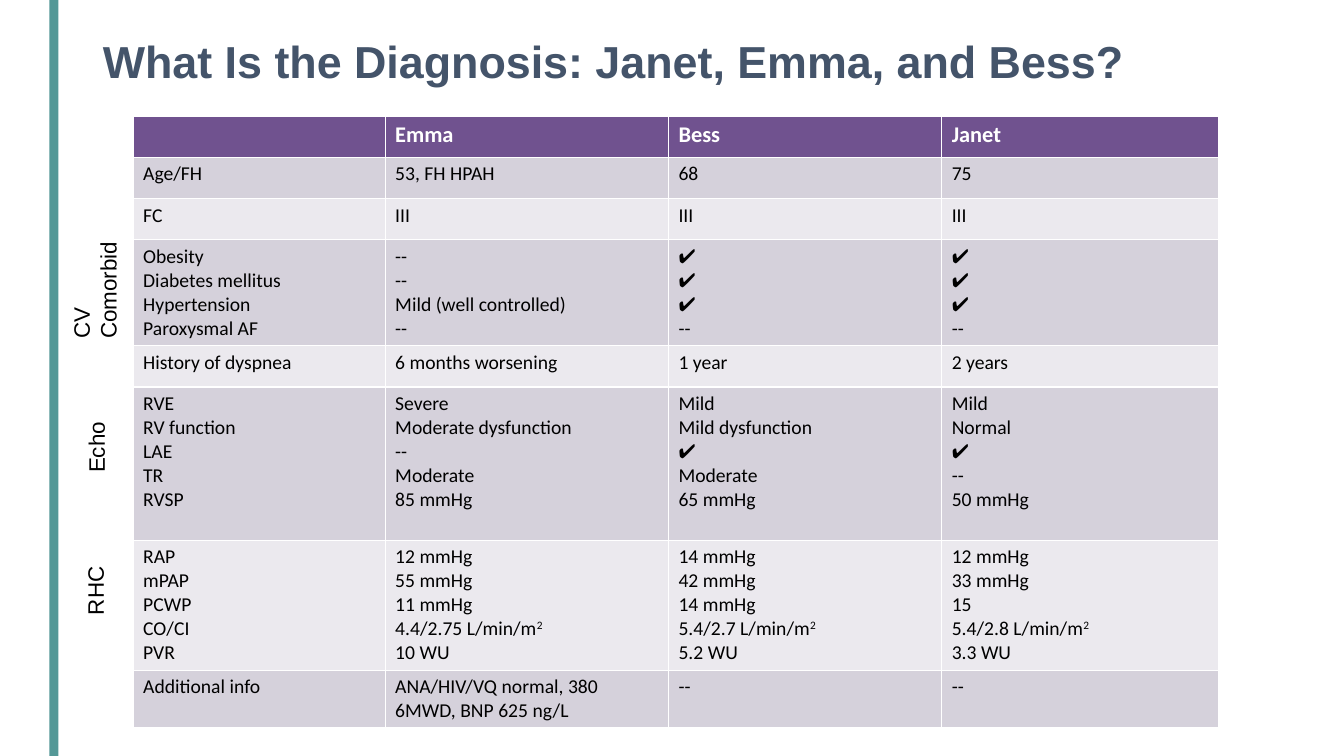
from pptx import Presentation
from pptx.dml.color import RGBColor
from pptx.enum.shapes import MSO_SHAPE
from pptx.enum.text import MSO_ANCHOR, PP_ALIGN
from pptx.util import Inches, Pt

RECTANGLE = MSO_SHAPE.RECTANGLE
MIDDLE = MSO_ANCHOR.MIDDLE
LEFT = PP_ALIGN.LEFT

TITLE = "What Is the Diagnosis: Janet, Emma, and Bess?"
HEADER = ("", "Emma", "Bess", "Janet")
# Each row: height, then one text per column with a line per finding
ROWS = [
    (0.41, "Age/FH", "53, FH HPAH", "68", "75"),
    (0.41, "FC", "III", "III", "III"),
    (1.05, "Obesity\nDiabetes mellitus\nHypertension\nParoxysmal AF",
     "--\n--\nMild (well controlled)\n--",
     "✔️\n✔️\n✔️\n--",
     "✔️\n✔️\n✔️\n--"),
    (0.41, "History of dyspnea", "6 months worsening", "1 year", "2 years"),
    (1.52, "RVE\nRV function\nLAE\nTR\nRVSP",
     "Severe\nModerate dysfunction\n--\nModerate\n85 mmHg",
     "Mild\nMild dysfunction\n✔️\nModerate\n65 mmHg",
     "Mild\nNormal\n✔️\n--\n50 mmHg"),
    (1.29, "RAP\nmPAP\nPCWP\nCO/CI\nPVR",
     "12 mmHg\n55 mmHg\n11 mmHg\n4.4/2.75 L/min/m²\n10 WU",
     "14 mmHg\n42 mmHg\n14 mmHg\n5.4/2.7 L/min/m²\n5.2 WU",
     "12 mmHg\n33 mmHg\n15\n5.4/2.8 L/min/m²\n3.3 WU"),
    (0.56, "Additional info", "ANA/HIV/VQ normal, 380 6MWD, BNP 625 ng/L",
     "--", "--"),
]
HEADER_HEIGHT = 0.41
COLUMN_WIDTHS = (2.5, 2.81, 2.71, 2.75)
TABLE_LEFT, TABLE_TOP = 1.32, 1.15
BANDS = ("D5D1DB", "EBE9EE")
# Side labels: text, left, top, width, height before rotation
SIDE_LABELS = [
    ("Echo", 0.6, 4.25, 0.71, 0.37),
    ("RHC", 0.6, 5.67, 0.69, 0.37),
    ("CV\nComorbid", 0.12, 2.32, 1.64, 0.64),
]


def rgb(code):
    return RGBColor.from_string(code)


def set_font(p, name, size, color, bold=False):
    p.font.name = name
    p.font.size = Pt(size)
    p.font.bold = bold
    p.font.color.rgb = rgb(color)


def add_line(p, line):
    """Write one line, raising a closing ² as a superscript 2."""
    p.add_run().text = line.removesuffix("²")
    if line.endswith("²"):
        r = p.add_run()
        r.text = "2"
        r._r.get_or_add_rPr().set("baseline", "30000")


def fill_cell(cell, text, fill, size, color, bold):
    cell.fill.solid()
    cell.fill.fore_color.rgb = rgb(fill)
    tf = cell.text_frame
    for i, line in enumerate(text.split("\n")):
        p = tf.add_paragraph() if i else tf.paragraphs[0]
        set_font(p, "Calibri", size, color, bold)
        if line:
            add_line(p, line)


def add_title(slide):
    title = slide.shapes.title
    title.left, title.top = Inches(0.92), Inches(-0.09)
    title.width, title.height = Inches(11.5), Inches(1.45)
    tf = title.text_frame
    tf.text = TITLE
    tf.word_wrap = True
    tf.vertical_anchor = MIDDLE
    p = tf.paragraphs[0]
    p.alignment = LEFT
    p.line_spacing = 0.9
    set_font(p, "Arial", 32, "44546A", True)


def add_accent_bar(slide, height):
    bar = slide.shapes.add_shape(RECTANGLE, Inches(0.49), 0, Inches(0.09), height)
    bar.shadow.inherit = False
    bar.fill.solid()
    bar.fill.fore_color.rgb = rgb("549897")
    bar.line.fill.background()


def add_patient_table(slide):
    heights = [HEADER_HEIGHT] + [row[0] for row in ROWS]
    table = slide.shapes.add_table(
        len(heights), len(HEADER), Inches(TABLE_LEFT), Inches(TABLE_TOP),
        Inches(sum(COLUMN_WIDTHS)), Inches(sum(heights))).table
    for column, width in zip(table.columns, COLUMN_WIDTHS):
        column.width = Inches(width)
    for row, height in zip(table.rows, heights):
        row.height = Inches(height)
    for c, name in enumerate(HEADER):
        fill_cell(table.cell(0, c), name, "70528F", 16, "FFFFFF", True)
    for r, (_, *texts) in enumerate(ROWS):
        for c, text in enumerate(texts):
            fill_cell(table.cell(r + 1, c), text, BANDS[r % 2], 14, "000000", False)


def add_side_label(slide, text, *box):
    sp = slide.shapes.add_textbox(*map(Inches, box))
    sp.rotation = 270
    tf = sp.text_frame
    tf.text = text
    tf.word_wrap = "\n" in text
    for p in tf.paragraphs:
        set_font(p, "Arial", 16, "000000")


def main():
    prs = Presentation()
    prs.slide_width, prs.slide_height = Inches(13.33), Inches(7.5)
    slide = prs.slides.add_slide(prs.slide_layouts[5])
    add_accent_bar(slide, prs.slide_height)
    add_title(slide)
    add_patient_table(slide)
    for label in SIDE_LABELS:
        add_side_label(slide, *label)
    prs.save("out.pptx")


if __name__ == "__main__":
    main()
